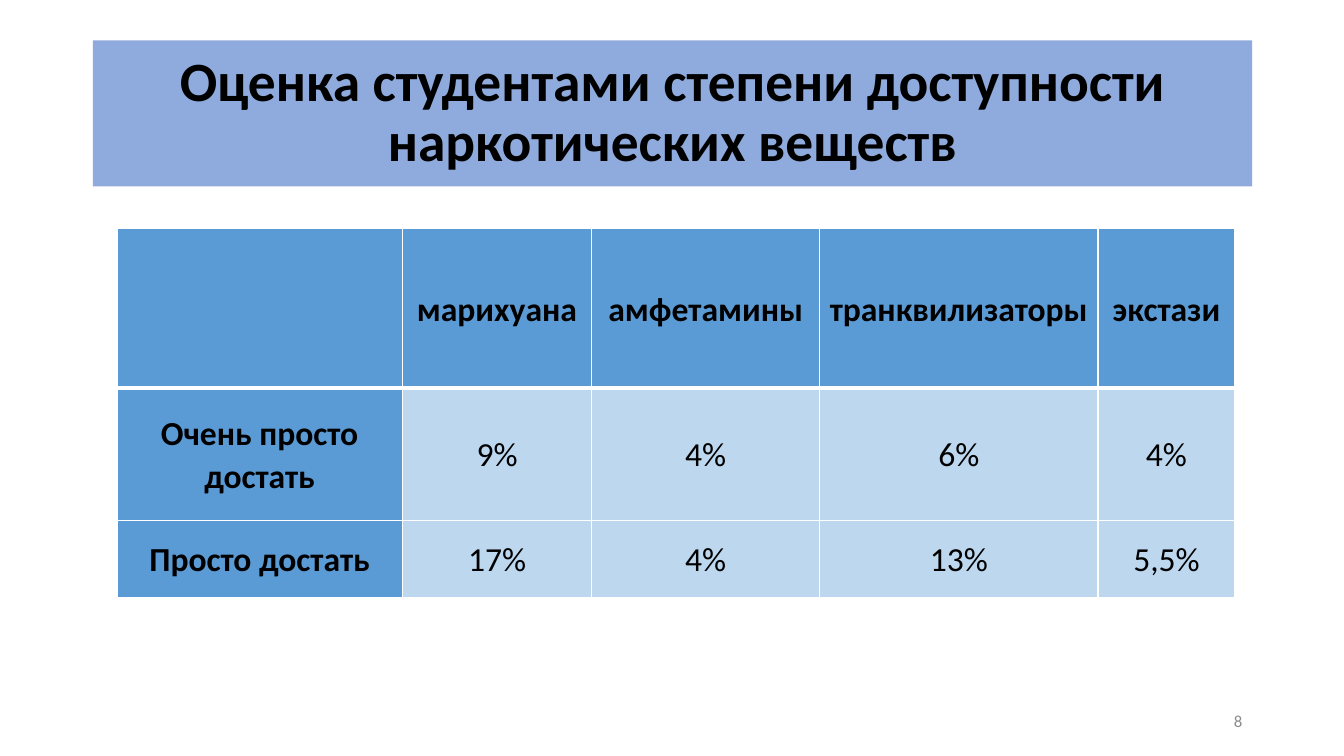
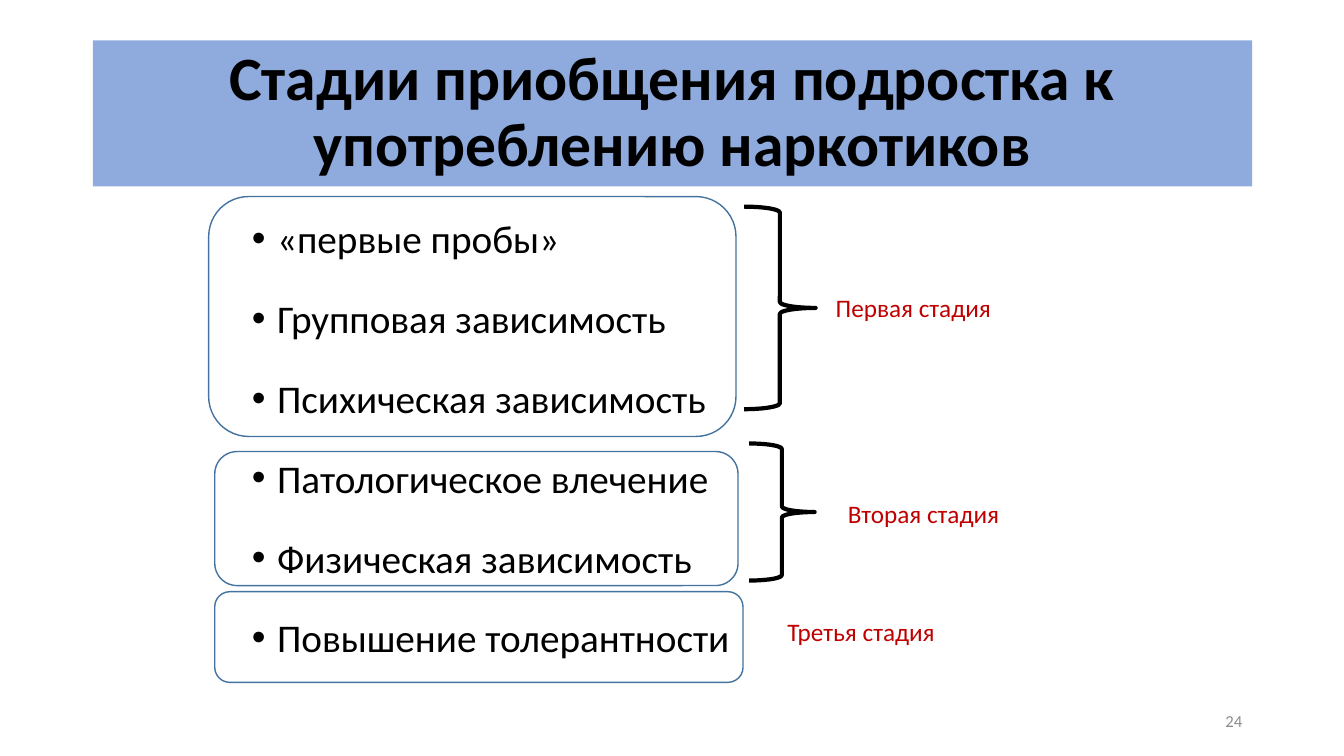
from lxml import etree
from pptx import Presentation
from pptx import util as u
from pptx.dml.color import RGBColor
from pptx.enum import shapes, text
from pptx.oxml.ns import qn

COLORS = {
    "band": "8FAADC", "head": "5B9BD5", "cell": "BDD7EE", "grid": "FFFFFF",
    "text": "000000", "number": "8C8C8C", "stage": "C00000", "outline": "43739E",
}
FONT = "Calibri"
TITLE_BOX = (0.92, 0.4, 11.5, 1.45)
NUMBER_BOX = (9.42, 6.95, 3, 0.4)
TABLE_BOX = (1.16, 2.27, 11.09, 3.66)
STAGES_BOX = (2.07, 1.89, 8.9, 4.88)


def rgb(name):
    return RGBColor.from_string(COLORS[name])


def inches(box):
    return [u.Inches(v) for v in box]


def format_text(p, size, color="text", bold=False, align=None):
    p.alignment = align
    for r in p.runs:
        r.font.name = FONT
        r.font.size = u.Pt(size)
        r.font.bold = bold
        r.font.color.rgb = rgb(color)


def add_text(s, box, value, size, color, align=None, wrap=True,
             anchor=text.MSO_ANCHOR.TOP):
    tf = s.shapes.add_textbox(*inches(box)).text_frame
    tf.word_wrap = wrap
    tf.vertical_anchor = anchor
    tf.text = value
    for p in tf.paragraphs:
        format_text(p, size, color, align=align)
    return tf


def add_outline(s, kind, box, color, width):
    sp = s.shapes.add_shape(kind, *inches(box))
    sp.shadow.inherit = False
    sp.fill.background()
    sp.line.color.rgb = rgb(color)
    sp.line.width = u.Pt(width)


def add_slide(prs, title, size, number):
    s = prs.slides.add_slide(prs.slide_layouts[5])
    sp = s.shapes.title
    sp.left, sp.top, sp.width, sp.height = inches(TITLE_BOX)
    sp.fill.solid()
    sp.fill.fore_color.rgb = rgb("band")
    tf = sp.text_frame
    tf.text = title
    tf.word_wrap = True
    tf.auto_size = text.MSO_AUTO_SIZE.NONE
    tf.vertical_anchor = text.MSO_ANCHOR.MIDDLE
    p = tf.paragraphs[0]
    p.line_spacing = 0.9
    format_text(p, size, bold=True, align=text.PP_ALIGN.CENTER)
    add_text(s, NUMBER_BOX, number, 12, "number", text.PP_ALIGN.RIGHT,
             anchor=text.MSO_ANCHOR.MIDDLE)
    return s


def set_borders(cell, top, bottom):
    tcPr = cell._tc.get_or_add_tcPr()
    for side, width in (("L", 1), ("R", 1), ("T", top), ("B", bottom)):
        ln = etree.SubElement(tcPr, qn(f"a:ln{side}"), w=str(u.Pt(width)))
        fill = etree.SubElement(ln, qn("a:solidFill"))
        etree.SubElement(fill, qn("a:srgbClr"), val=COLORS["grid"])


def add_availability_table(s, box):
    rows = [
        ("", "марихуана", "амфетамины", "транквилизаторы", "экстази"),
        ("Очень просто достать", "9%", "4%", "6%", "4%"),
        ("Просто достать", "17%", "4%", "13%", "5,5%"),
    ]
    tbl = s.shapes.add_table(len(rows), len(rows[0]), *inches(box)).table
    tbl.horz_banding = False
    for column, width in zip(tbl.columns, (2.83, 1.88, 2.26, 2.76, 1.36)):
        column.width = u.Inches(width)
    for row, height in zip(tbl.rows, (1.58, 1.31, 0.77)):
        row.height = u.Inches(height)
    for i, values in enumerate(rows):
        for j, value in enumerate(values):
            cell = tbl.cell(i, j)
            heading = i == 0 or j == 0
            set_borders(cell, 3 if i == 1 else 1, 3 if i == 0 else 1)
            cell.fill.solid()
            cell.fill.fore_color.rgb = rgb("head" if heading else "cell")
            cell.vertical_anchor = text.MSO_ANCHOR.MIDDLE
            cell.margin_left = cell.margin_right = u.Inches(0.07)
            cell.margin_top = cell.margin_bottom = 0
            cell.text = value
            p = cell.text_frame.paragraphs[0]
            p.line_spacing = 1.07
            p.space_after = u.Pt(8)
            format_text(p, 24, bold=heading, align=text.PP_ALIGN.CENTER)


def add_bullets(s, box, items):
    tf = add_text(s, box, "\n".join(items), 28, "text")
    for p in tf.paragraphs:
        p.line_spacing = 1.4
        p.space_before = u.Pt(10)
        pPr = p._p.get_or_add_pPr()
        pPr.set("marL", str(u.Inches(0.25)))
        pPr.set("indent", str(u.Inches(-0.25)))
        etree.SubElement(pPr, qn("a:buFont"), typeface="Arial")
        etree.SubElement(pPr, qn("a:buChar"), char="•")


def add_stages(s, box):
    x, y, w, h = box
    stages = [
        ("Первая стадия", (6.12, 0.96, 1.76, 0.4),
         (0, 0.06, 5.23, 2.38), (5.31, 0.16, 0.71, 2.01)),
        ("Вторая стадия", (6.24, 3, 1.72, 0.4),
         (0.06, 2.59, 5.19, 1.33), (5.36, 2.51, 0.65, 1.36)),
        ("Третья стадия", (5.64, 4.18, 1.68, 0.4),
         (0.06, 3.98, 5.24, 0.9), None),
    ]

    def place(part):
        return (x + part[0], y + part[1], *part[2:])

    add_bullets(s, (x + 0.33, y, w - 0.33, h - 0.08), [
        "«первые пробы»", "Групповая зависимость", "Психическая зависимость",
        "Патологическое влечение", "Физическая зависимость",
        "Повышение толерантности",
    ])
    for name, label, frame, brace in stages:
        add_outline(s, shapes.MSO_SHAPE.ROUNDED_RECTANGLE, place(frame),
                    "outline", 1)
        add_text(s, place(label), name, 18, "stage", wrap=False)
        if brace:
            add_outline(s, shapes.MSO_SHAPE.RIGHT_BRACE, place(brace),
                        "text", 3)


def main():
    prs = Presentation()
    prs.slide_width, prs.slide_height = u.Inches(13.33), u.Inches(7.5)
    s = add_slide(prs, "Оценка студентами степени доступности "
                  "наркотических веществ", 39.6, "8")
    add_availability_table(s, TABLE_BOX)
    s = add_slide(prs, "Стадии приобщения подростка к "
                  "употреблению наркотиков", 44, "24")
    add_stages(s, STAGES_BOX)
    prs.save("out.pptx")


if __name__ == "__main__":
    main()
